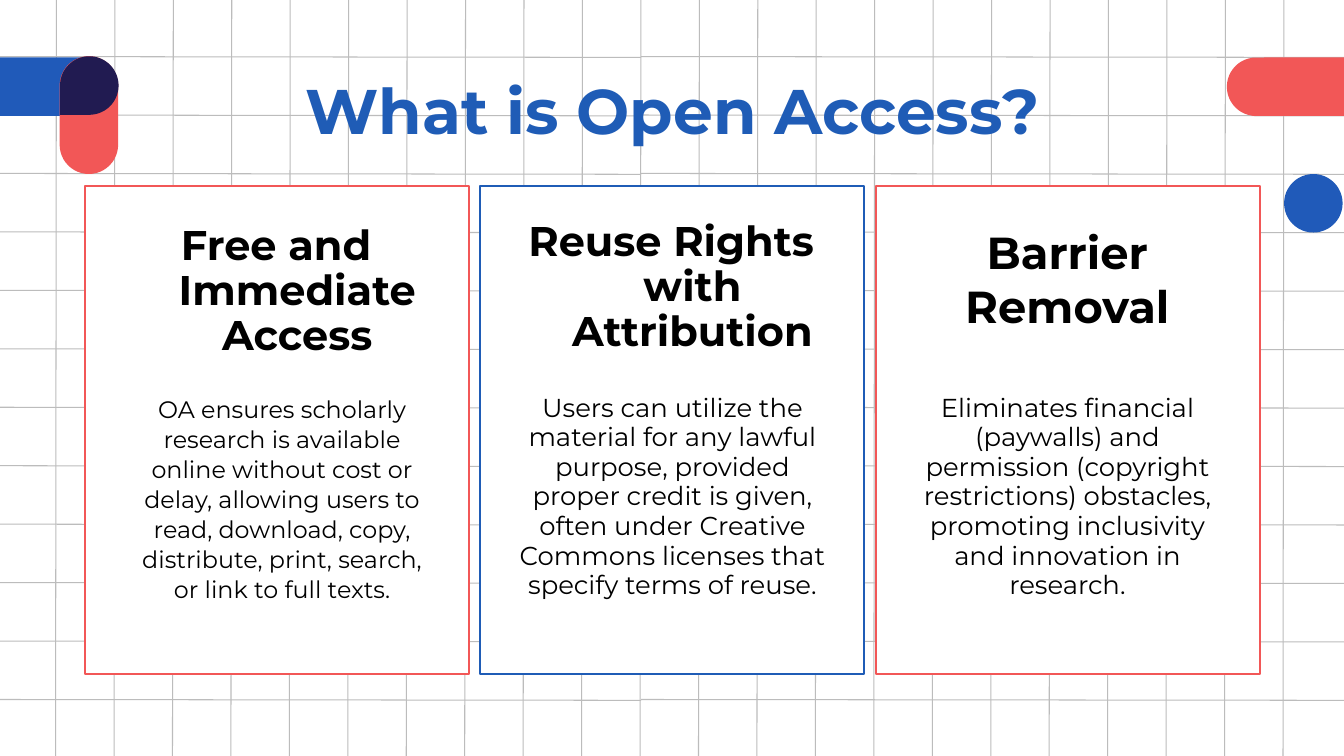
import math
from dataclasses import dataclass

from pptx import Presentation
from pptx.dml.color import RGBColor
from pptx.enum.shapes import MSO_CONNECTOR, MSO_SHAPE
from pptx.enum.text import MSO_ANCHOR, MSO_AUTO_SIZE, PP_ALIGN
from pptx.oxml import parse_xml
from pptx.oxml.ns import nsdecls
from pptx.util import Pt

STRAIGHT = MSO_CONNECTOR.STRAIGHT
RECTANGLE = MSO_SHAPE.RECTANGLE
PILL = MSO_SHAPE.ROUNDED_RECTANGLE
TAB = MSO_SHAPE.ROUND_2_SAME_RECTANGLE
DISC = MSO_SHAPE.OVAL
TOP, MIDDLE = MSO_ANCHOR.TOP, MSO_ANCHOR.MIDDLE
NO_AUTOFIT = MSO_AUTO_SIZE.NONE
CENTER = PP_ALIGN.CENTER

WIDTH, HEIGHT = 960, 540
TITLE_ONLY = 5


@dataclass(frozen=True)
class Theme:
    font: str = "Montserrat"
    blue: str = "205AB9"
    title_blue: str = "1F5CB6"
    red: str = "F25757"
    navy: str = "211B51"
    grid: str = "BCBCBC"
    paper: str = "FFFFFF"
    ink: str = "000000"
    title_size: float = 45
    heading_size: float = 29.6
    large_heading_size: float = 32
    small_body_size: float = 17
    body_size: float = 18.5
    inset: float = 9.6


@dataclass(frozen=True)
class Passage:
    """Wording of one text block with its place and paragraph settings."""
    words: str
    left: float
    top: float
    width: float
    height: float
    size: float
    spacing: float = 1.0
    margin: float = 0
    indent: float = 0
    after: float = 0


class SlideBuilder:
    def __init__(self, slide, theme):
        self.slide = slide
        self.theme = theme

    def line(self, x1, y1, x2, y2):
        rule = self.slide.shapes.add_connector(
            STRAIGHT, Pt(x1), Pt(y1), Pt(x2), Pt(y2))
        rule.line.color.rgb = RGBColor.from_string(self.theme.grid)
        rule.line.width = Pt(0.75)
        rule._element.spPr.append(
            parse_xml(f"<a:effectLst {nsdecls('a')}/>"))

    def paint(self, shape, fill, outline=None):
        shape.shadow.inherit = False
        shape.fill.solid()
        shape.fill.fore_color.rgb = RGBColor.from_string(fill)
        if outline:
            shape.line.color.rgb = RGBColor.from_string(outline)
            shape.line.width = Pt(1.5)
        else:
            shape.line.fill.background()

    def shape(self, kind, left, top, width, height, fill,
              outline=None, rotation=0, corners=()):
        shape = self.slide.shapes.add_shape(
            kind, Pt(left), Pt(top), Pt(width), Pt(height))
        shape.rotation = rotation
        for index, corner in enumerate(corners):
            shape.adjustments[index] = corner
        self.paint(shape, fill, outline)

    def overlap(self, left, top, size, fill):
        """Disc whose lower left quarter is filled out to a square corner."""
        radius = size / 2
        arc = [(Pt(left + radius + radius * math.cos(math.radians(angle))),
                Pt(top + radius + radius * math.sin(math.radians(angle))))
               for angle in range(90, -181, -5)]
        outline = self.slide.shapes.build_freeform(Pt(left), Pt(top + size))
        outline.add_line_segments(arc, close=True)
        self.paint(outline.convert_to_shape(), fill)

    def fill_text(self, holder, passage, color, bold=False, anchor=TOP):
        frame = holder.text_frame
        frame.word_wrap = True
        frame.auto_size = NO_AUTOFIT
        frame.vertical_anchor = anchor
        frame.margin_left = frame.margin_right = Pt(self.theme.inset)
        frame.margin_top = frame.margin_bottom = Pt(self.theme.inset)
        frame.text = passage.words
        paragraph = frame.paragraphs[0]
        paragraph.alignment = CENTER
        paragraph.line_spacing = passage.spacing
        paragraph.space_before = Pt(0)
        paragraph.space_after = Pt(passage.after)
        properties = paragraph._p.get_or_add_pPr()
        properties.set("marL", str(Pt(passage.margin)))
        properties.set("indent", str(Pt(passage.indent)))
        paragraph.font.name = self.theme.font
        paragraph.font.size = Pt(passage.size)
        paragraph.font.bold = bold
        paragraph.font.color.rgb = RGBColor.from_string(color)

    def title(self, passage):
        """Format the title and bring it in front of the grid."""
        title = self.slide.shapes.title
        title.left, title.top = Pt(passage.left), Pt(passage.top)
        title.width, title.height = Pt(passage.width), Pt(passage.height)
        self.fill_text(title, passage, self.theme.title_blue, True, MIDDLE)
        self.slide.shapes._spTree.append(title._element)

    def text(self, passage, bold=False):
        box = self.slide.shapes.add_textbox(
            Pt(passage.left), Pt(passage.top),
            Pt(passage.width), Pt(passage.height))
        self.fill_text(box, passage, self.theme.ink, bold)


def draw_grid(builder):
    """Slightly tilted rules; the rows are drawn in two halves."""
    pitch, middle = 41.75, 458
    for column in range(22):
        x = 40 + column * pitch
        builder.line(x + 0.3, -2, x - 0.3, HEIGHT + 2)
    for row in range(12):
        y = 40.7 + row * pitch
        for start, end in ((0, middle), (middle, WIDTH)):
            builder.line(start, y - 0.3, end, y + 0.3)


def draw_ornaments(builder, theme):
    size = 41.8
    builder.shape(TAB, 20.9, 20.2, size, 83.5, theme.blue,
                  rotation=90, corners=(0.5, 0))
    builder.shape(PILL, 21.4, 61.3, 84.2, size, theme.red,
                  rotation=90, corners=(0.5,))
    builder.overlap(42.9, 40.2, size, theme.navy)
    builder.shape(TAB, 897.2, 20.2, size, 83.5, theme.red,
                  rotation=270, corners=(0.5, 0))
    builder.shape(DISC, 917.2, 124.3, size, size, theme.blue)


def main():
    theme = Theme()
    presentation = Presentation()
    presentation.slide_width, presentation.slide_height = Pt(WIDTH), Pt(HEIGHT)
    slide = presentation.slides.add_slide(
        presentation.slide_layouts[TITLE_ONLY])
    slide.background.fill.solid()
    slide.background.fill.fore_color.rgb = RGBColor.from_string(theme.paper)
    builder = SlideBuilder(slide, theme)

    draw_grid(builder)
    draw_ornaments(builder, theme)
    for card, outline in enumerate((theme.red, theme.title_blue, theme.red)):
        builder.shape(RECTANGLE, 60.4 + card * 282.6, 133, 274.3, 348.5,
                      theme.paper, outline)

    builder.title(Passage("What is Open Access?", 60.4, 53.3, 839.5, 59.8,
                          theme.title_size, 0.8))

    body_top, body_height, heading_height, column = 271.5, 190.8, 120.2, 247.7
    hanging = {"spacing": 0.9, "margin": 36, "indent": -30.2}
    headings = (
        Passage("Free and Immediate Access", 67.7, 151.2, 253.4,
                heading_height, theme.heading_size, **hanging),
        Passage("Reuse Rights with Attribution", 352.8, 148.3, column,
                heading_height, theme.heading_size, **hanging),
        Passage("Barrier Removal", 638.6, 151.2, column,
                heading_height, theme.large_heading_size),
    )
    bodies = (
        Passage("OA ensures scholarly research is available online without "
                "cost or delay, allowing users to read, download, copy, "
                "distribute, print, search, or link to full texts.",
                73.4, body_top, column, body_height,
                theme.small_body_size, 1.05, margin=8.6),
        Passage("Users can utilize the material for any lawful purpose, "
                "provided proper credit is given, often under Creative "
                "Commons licenses that specify terms of reuse.",
                356.4, body_top, column, body_height,
                theme.body_size, 0.95, after=16),
        Passage("Eliminates financial (paywalls) and permission (copyright "
                "restrictions) obstacles, promoting inclusivity and "
                "innovation in research.",
                638.6, body_top, column, body_height,
                theme.body_size, 0.95, after=16),
    )
    for heading, body in zip(headings, bodies):
        builder.text(heading, bold=True)
        builder.text(body)

    presentation.save("out.pptx")


if __name__ == "__main__":
    main()
